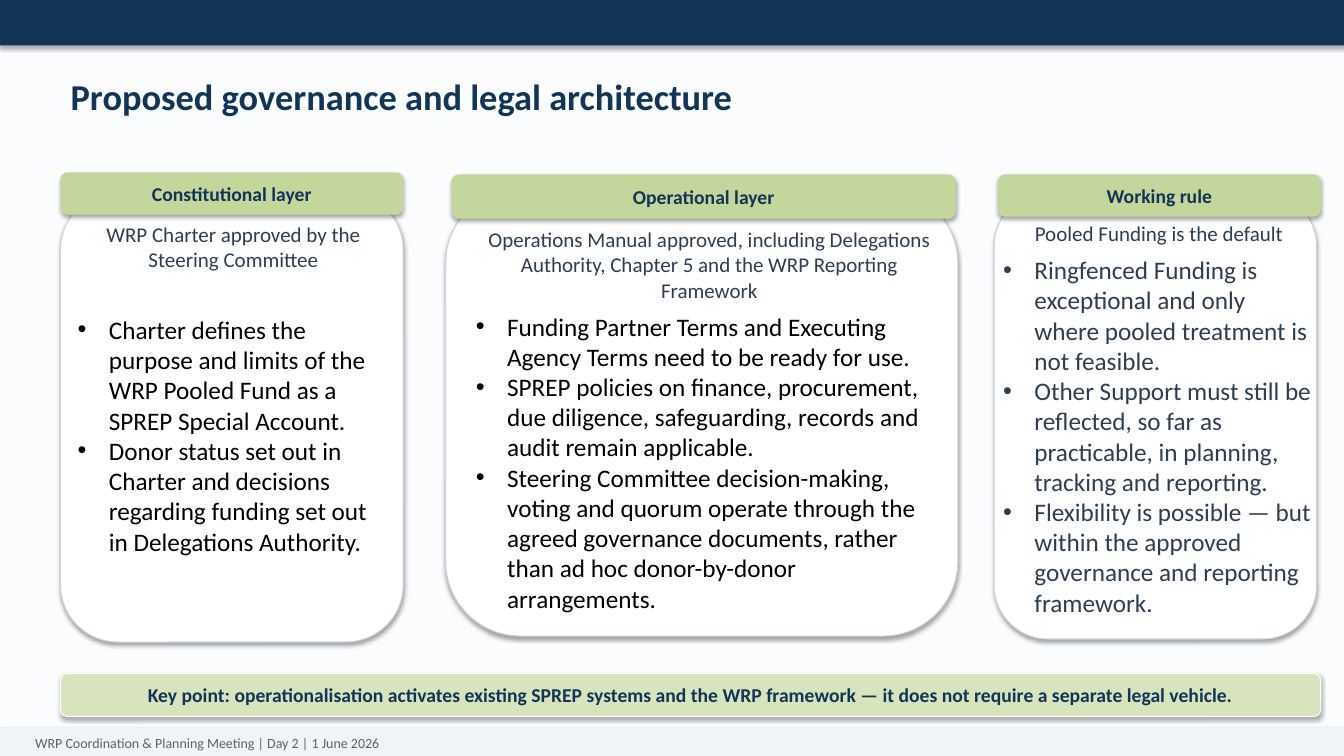
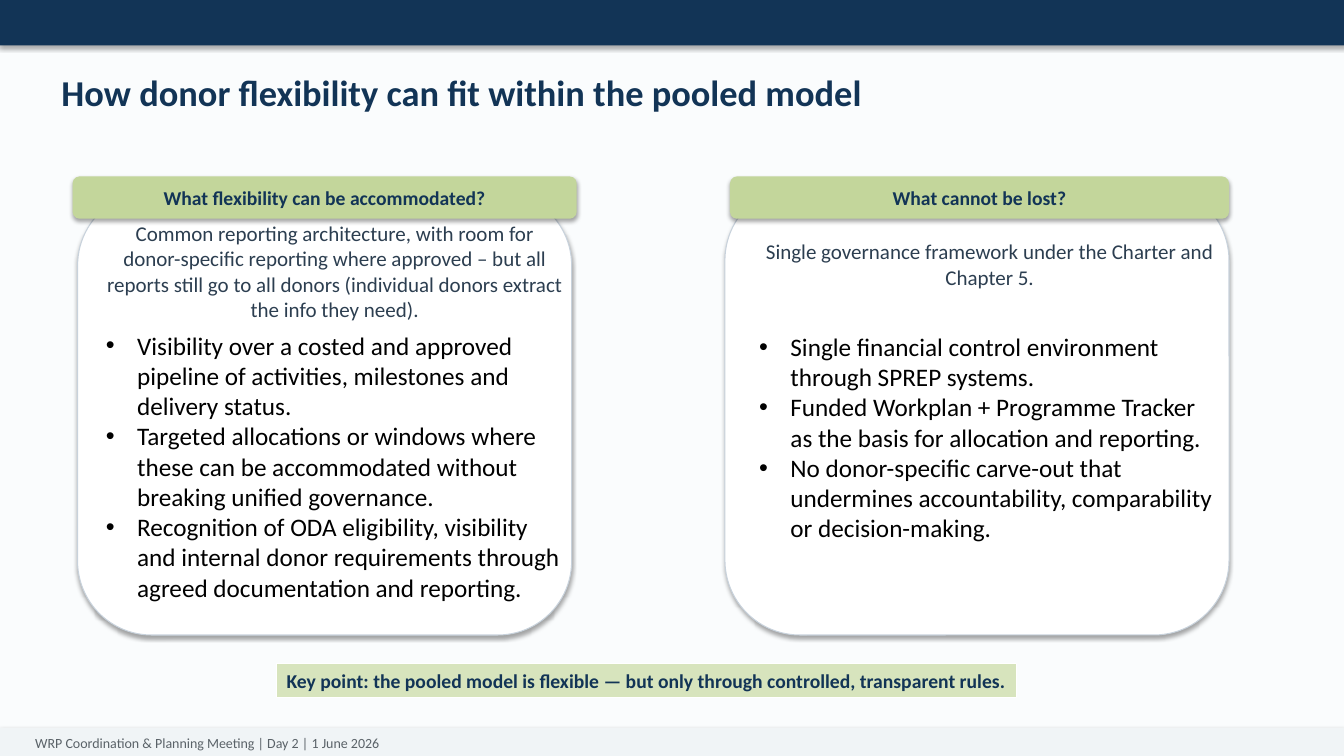
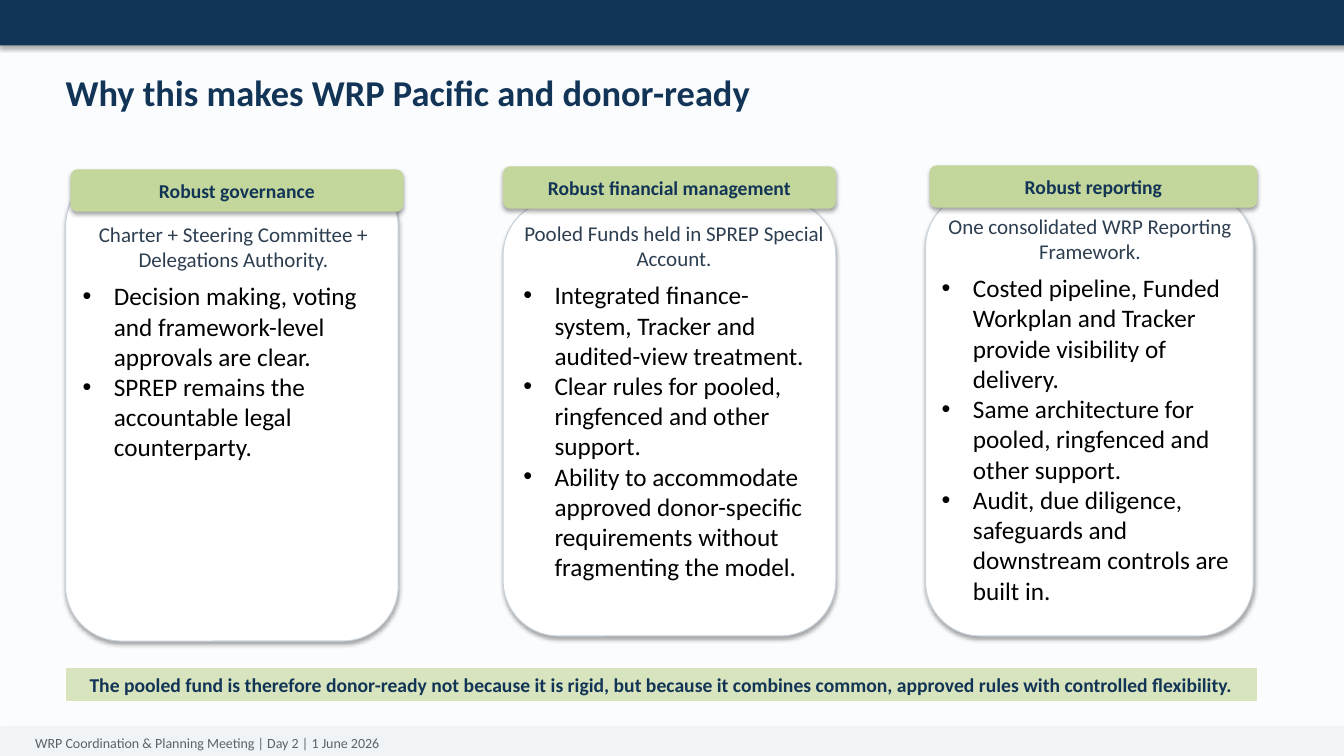
from dataclasses import dataclass

from lxml.etree import SubElement
from pptx import Presentation
from pptx.dml.color import RGBColor
from pptx.enum.shapes import MSO_SHAPE
from pptx.enum.text import MSO_ANCHOR, MSO_AUTO_SIZE, PP_ALIGN
from pptx.oxml.ns import qn
from pptx.util import Inches, Pt


# Theme: colours, type sizes and fixed measures
@dataclass(frozen=True)
class Theme:
    font: str = "Calibri"
    background: str = "FAFCFD"
    navy: str = "123456"
    slate: str = "2C3E50"
    black: str = "000000"
    white: str = "FFFFFF"
    border: str = "C8D2DC"
    header_green: str = "C3D69B"
    key_green: str = "D7E4BD"
    footer_fill: str = "F0F4F6"
    footer_text: str = "5A6268"
    title_size: float = 26
    bullet_size: float = 18
    summary_size: float = 15
    label_size: float = 14
    footer_size: float = 10
    line_width: float = 0.75
    bullet_indent: float = 0.31
    slide_width: float = 13.33
    slide_height: float = 7.5


FOOTER = "WRP Coordination & Planning Meeting | Day 2 | 1 June 2026"
COMPARISON_LAYOUT = 4


class Deck:
    """Holds the style and the slide being built."""

    def __init__(self, theme):
        self.theme = theme
        self.presentation = Presentation()
        self.presentation.slide_width = Inches(theme.slide_width)
        self.presentation.slide_height = Inches(theme.slide_height)
        fill = self.presentation.slide_master.background.fill
        fill.solid()
        fill.fore_color.rgb = RGBColor.from_string(theme.background)

    # Slide frame
    def start_slide(self, title, box):
        theme = self.theme
        layout = self.presentation.slide_layouts[COMPARISON_LAYOUT]
        self.slide = self.presentation.slides.add_slide(layout)
        self.free_bodies = [shape for shape in self.slide.placeholders
                            if shape.placeholder_format.idx != 0]
        self.panel((0, 0, theme.slide_width, 0.45), theme.navy)
        footer = self.panel((0, 7.22, theme.slide_width, 0.28), theme.footer_fill)
        self.insets(footer.text_frame, 0.35, 0.06, 0.1, 0.05)
        self.label(footer, FOOTER, theme.footer_size, theme.footer_text,
                   bold=False, alignment=PP_ALIGN.LEFT)
        heading = self.slide.shapes.title
        self.place(heading, box)
        heading.text_frame.auto_size = MSO_AUTO_SIZE.NONE
        self.label(heading, title, theme.title_size, theme.navy,
                   alignment=PP_ALIGN.LEFT, anchor=MSO_ANCHOR.TOP, wrap=False)

    def finish_slide(self):
        for placeholder in self.free_bodies:
            element = placeholder.element
            element.getparent().remove(element)

    # Elements
    def panel(self, box, fill, line=None, rounded=False, shadow=True):
        kind = MSO_SHAPE.ROUNDED_RECTANGLE if rounded else MSO_SHAPE.RECTANGLE
        shape = self.slide.shapes.add_shape(kind, *map(Inches, box))
        shape.fill.solid()
        shape.fill.fore_color.rgb = RGBColor.from_string(fill)
        if line:
            shape.line.color.rgb = RGBColor.from_string(line)
            shape.line.width = Pt(self.theme.line_width)
        else:
            shape.line.fill.background()
        shape.shadow.inherit = False
        if shadow:
            self.drop_shadow(shape)
        return shape

    def card(self, panel, header, text, heading, summary, bullets,
             gap=6, bullet_color=None):
        theme = self.theme
        self.panel(panel, theme.white, theme.border, rounded=True)
        tab = self.panel(header, theme.header_green, rounded=True)
        self.label(tab, heading, theme.label_size, theme.navy)
        self.bullet_list(text, summary, bullets, gap, bullet_color or theme.black)

    def bullet_list(self, box, summary, bullets, gap, color):
        theme = self.theme
        body = self.free_bodies.pop(0)
        self.place(body, box)
        frame = body.text_frame
        frame.word_wrap = True
        frame.auto_size = MSO_AUTO_SIZE.SHAPE_TO_FIT_TEXT
        frame.vertical_anchor = MSO_ANCHOR.TOP
        self.insets(frame, 0.05, 0.02, 0.02, 0.02)
        paragraph = frame.paragraphs[0]
        self.bullet(paragraph, None)
        paragraph.alignment = PP_ALIGN.CENTER
        paragraph.space_before = Pt(0)
        paragraph.space_after = Pt(gap)
        self.run(paragraph, summary, theme.summary_size, theme.slate)
        for item in bullets:
            paragraph = frame.add_paragraph()
            self.bullet(paragraph, "•")
            paragraph.alignment = PP_ALIGN.LEFT
            paragraph.space_before = Pt(0)
            self.run(paragraph, item, theme.bullet_size, color)

    def key_point(self, box, text, raised=False, wrap=True):
        theme = self.theme
        bar = self.panel(box, theme.key_green, theme.white,
                         rounded=raised, shadow=raised)
        self.label(bar, text, theme.label_size, theme.navy, wrap=wrap)

    # Text and shape helpers
    def label(self, shape, text, size, color, bold=True,
              alignment=PP_ALIGN.CENTER, anchor=MSO_ANCHOR.MIDDLE, wrap=True):
        frame = shape.text_frame
        frame.word_wrap = wrap
        frame.vertical_anchor = anchor
        paragraph = frame.paragraphs[0]
        paragraph.alignment = alignment
        self.run(paragraph, text, size, color, bold)

    def run(self, paragraph, text, size, color, bold=False):
        run = paragraph.add_run()
        run.text = text
        run.font.name = self.theme.font
        run.font.size = Pt(size)
        run.font.bold = bold
        run.font.color.rgb = RGBColor.from_string(color)

    def bullet(self, paragraph, character):
        properties = paragraph._p.get_or_add_pPr()
        indent = Inches(self.theme.bullet_indent) if character else 0
        properties.set("marL", str(indent))
        properties.set("indent", str(-indent))
        if character:
            SubElement(properties, qn("a:buFont"), typeface="Arial")
            SubElement(properties, qn("a:buChar"), char=character)
        else:
            SubElement(properties, qn("a:buNone"))

    def place(self, placeholder, box):
        (placeholder.left, placeholder.top,
         placeholder.width, placeholder.height) = map(Inches, box)
        # Bring the placeholder in front of the shapes drawn so far
        element = placeholder.element
        element.getparent().append(element)

    @staticmethod
    def insets(frame, left, top, right, bottom):
        frame.margin_left, frame.margin_top = Inches(left), Inches(top)
        frame.margin_right, frame.margin_bottom = Inches(right), Inches(bottom)

    @staticmethod
    def drop_shadow(shape):
        effects = shape.element.spPr.find(qn("a:effectLst"))
        shadow = SubElement(effects, qn("a:outerShdw"), blurRad=str(Pt(3.1)),
                            dist=str(Pt(1.8)), dir="5400000", rotWithShape="0")
        color = SubElement(shadow, qn("a:srgbClr"), val="000000")
        SubElement(color, qn("a:alpha"), val="35000")


def build_architecture(deck):
    deck.start_slide("Proposed governance and legal architecture",
                     (0.6, 0.69, 6.9, 0.54))
    deck.card((0.6, 1.91, 3.4, 4.46), (0.6, 1.71, 3.4, 0.42), (0.72, 2.18, 3.16, 3.39),
              "Constitutional layer",
              "WRP Charter approved by the Steering Committee",
              ["Charter defines the purpose and limits of the WRP Pooled Fund "
               "as a SPREP Special Account.",
               "Donor status set out in Charter and decisions regarding funding "
               "set out in Delegations Authority."],
              gap=30)
    deck.card((4.42, 1.87, 5.08, 4.44), (4.48, 1.73, 5, 0.44), (4.67, 2.23, 4.7, 3.91),
              "Operational layer",
              "Operations Manual approved, including Delegations Authority, "
              "Chapter 5 and the WRP Reporting Framework",
              ["Funding Partner Terms and Executing Agency Terms need to be "
               "ready for use.",
               "SPREP policies on finance, procurement, due diligence, "
               "safeguarding, records and audit remain applicable.",
               "Steering Committee decision-making, voting and quorum operate "
               "through the agreed governance documents, rather than ad hoc "
               "donor-by-donor arrangements."])
    deck.card((9.86, 1.91, 3.2, 4.43), (9.9, 1.73, 3.2, 0.42), (9.9, 2.17, 3.16, 4.01),
              "Working rule",
              "Pooled Funding is the default",
              ["Ringfenced Funding is exceptional and only where pooled "
               "treatment is not feasible.",
               "Other Support must still be reflected, so far as practicable, "
               "in planning, tracking and reporting.",
               "Flexibility is possible — but within the approved governance "
               "and reporting framework."],
              bullet_color=deck.theme.slate)
    deck.key_point((0.6, 6.68, 12.5, 0.43),
                   "Key point: operationalisation activates existing SPREP systems "
                   "and the WRP framework — it does not require a separate legal "
                   "vehicle.", raised=True)
    deck.finish_slide()


def build_flexibility(deck):
    deck.start_slide("How donor flexibility can fit within the pooled model",
                     (0.51, 0.65, 8.23, 0.54))
    deck.card((0.77, 1.9, 4.9, 4.4), (0.72, 1.75, 5, 0.42), (1, 2.17, 4.61, 3.86),
              "What flexibility can be accommodated?",
              "Common reporting architecture, with room for donor-specific "
              "reporting where approved – but all reports still go to all donors "
              "(individual donors extract the info they need).",
              ["Visibility over a costed and approved pipeline of activities, "
               "milestones and delivery status.",
               "Targeted allocations or windows where these can be accommodated "
               "without breaking unified governance.",
               "Recognition of ODA eligibility, visibility and internal donor "
               "requirements through agreed documentation and reporting."])
    deck.card((7.19, 1.84, 5, 4.46), (7.24, 1.75, 4.95, 0.42), (7.48, 2.35, 4.64, 3.09),
              "What cannot be lost?",
              "Single governance framework under the Charter and Chapter 5.",
              ["Single financial control environment through SPREP systems.",
               "Funded Workplan + Programme Tracker as the basis for allocation "
               "and reporting.",
               "No donor-specific carve-out that undermines accountability, "
               "comparability or decision-making."],
              gap=30)
    deck.key_point((2.74, 6.58, 7.34, 0.34),
                   "Key point: the pooled model is flexible — but only through "
                   "controlled, transparent rules.", wrap=False)
    deck.finish_slide()


def build_readiness(deck):
    deck.start_slide("Why this makes WRP Pacific and donor-ready",
                     (0.55, 0.65, 7.08, 0.54))
    deck.card((0.65, 1.7, 3.3, 4.66), (0.7, 1.68, 3.3, 0.42), (0.77, 2.18, 3.06, 2.45),
              "Robust governance",
              "Charter + Steering Committee + Delegations Authority.",
              ["Decision making, voting and framework-level approvals are clear.",
               "SPREP remains the accountable legal counterparty."])
    deck.card((4.99, 1.98, 3.3, 4.33), (4.99, 1.65, 3.3, 0.42), (5.14, 2.17, 3.06, 3.66),
              "Robust financial management",
              "Pooled Funds held in SPREP Special Account.",
              ["Integrated finance-system, Tracker and audited-view treatment.",
               "Clear rules for pooled, ringfenced and other support.",
               "Ability to accommodate approved donor-specific requirements "
               "without fragmenting the model."])
    deck.card((9.18, 1.91, 3.25, 4.4), (9.22, 1.64, 3.25, 0.42), (9.29, 2.1, 3.01, 3.96),
              "Robust reporting",
              "One consolidated WRP Reporting Framework.",
              ["Costed pipeline, Funded Workplan and Tracker provide visibility "
               "of delivery.",
               "Same architecture for pooled, ringfenced and other support.",
               "Audit, due diligence, safeguards and downstream controls are "
               "built in."])
    deck.key_point((0.65, 6.62, 11.82, 0.34),
                   "The pooled fund is therefore donor-ready not because it is "
                   "rigid, but because it combines common, approved rules with "
                   "controlled flexibility.")
    deck.finish_slide()


def main():
    deck = Deck(Theme())
    build_architecture(deck)
    build_flexibility(deck)
    build_readiness(deck)
    deck.presentation.save("out.pptx")


if __name__ == "__main__":
    main()
